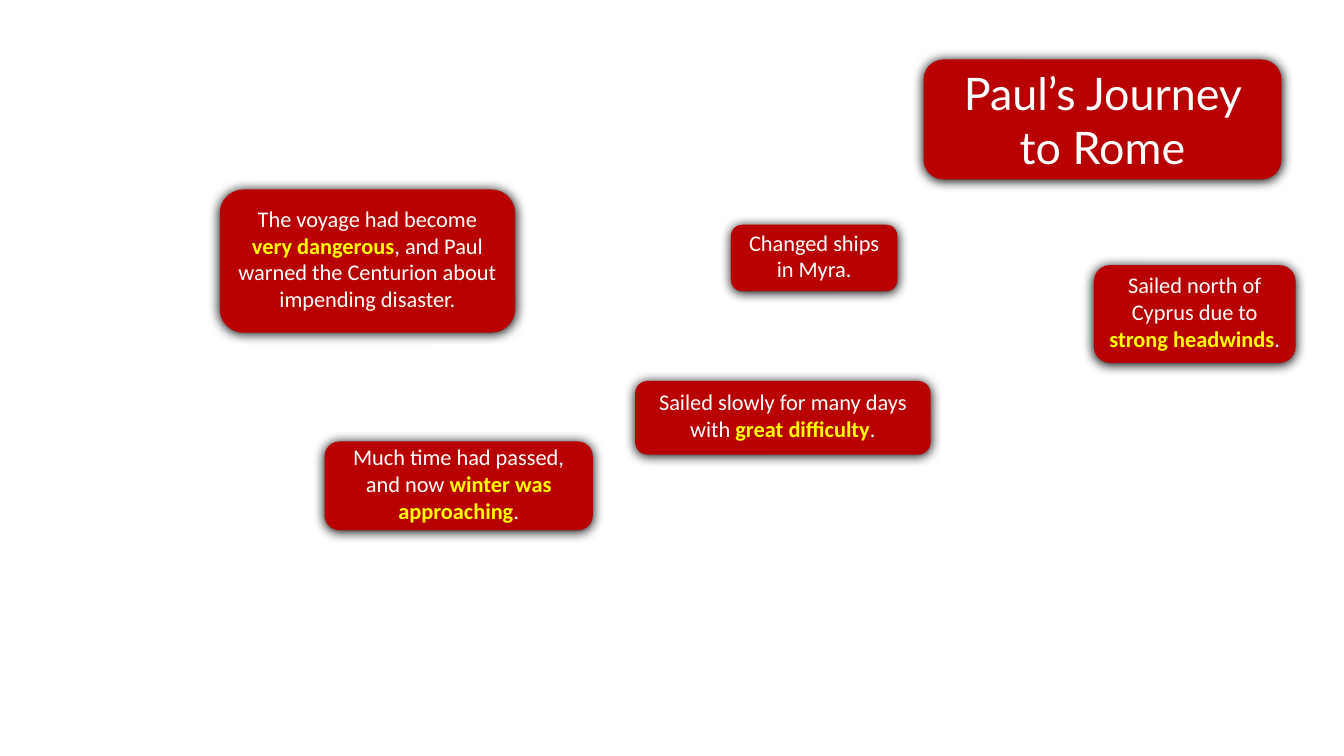
from lxml import etree
from pptx import Presentation
from pptx import util as u
from pptx.dml.color import RGBColor
from pptx.enum import shapes, text
from pptx.oxml import ns

RED = RGBColor(0xB9, 0x00, 0x00)
WHITE = RGBColor(0xFF, 0xFF, 0xFF)
YELLOW = RGBColor(0xFF, 0xFF, 0x00)
CELL = u.Inches(0.1)

HEAD = {"name": "Lato", "size": u.Pt(32)}
BODY = {"name": "Calibri", "size": u.Pt(16)}
EVEN = {"margin_top": u.Inches(0.05)}
HIGH = {"margin_top": 0}

GLOW = (
    f'<a:outerShdw {ns.nsdecls("a")} blurRad="{u.Pt(8.5)}" dist="{u.Pt(1)}" '
    'dir="5400000" algn="ctr" rotWithShape="0"><a:srgbClr val="000000"/></a:outerShdw>'
)

NOTES = [
    (91.6, 5.9, 35.5, 11.9, HEAD, EVEN, ["Paul’s Journey to Rome"]),
    (108.5, 26.3, 20, 9.7, BODY, HIGH,
     ["Sailed north of Cyprus due to ", "strong headwinds", "."]),
    (72.5, 22.3, 16.5, 6.6, BODY, HIGH, ["Changed ships in Myra."]),
    (63, 37.8, 29.3, 7.3, BODY, HIGH,
     ["Sailed slowly for many days with ", "great difficulty", "."]),
    (32.2, 43.8, 26.6, 8.8, BODY, HIGH,
     ["Much time had passed, and now ", "winter was approaching", "."]),
    (21.8, 18.8, 29.3, 14.2, BODY, HIGH,
     ["The voyage had become ", "very dangerous",
      ", and Paul warned the Centurion about impending disaster."]),
]

deck = Presentation()
deck.slide_width = u.Inches(13.33)
deck.slide_height = u.Inches(7.5)
slide = deck.slides.add_slide(deck.slide_layouts[6])

for col, row, wide, high, font, inset, parts in NOTES:
    area = [round(n * CELL) for n in (col, row, wide, high)]
    box = slide.shapes.add_shape(shapes.MSO_SHAPE.ROUNDED_RECTANGLE, *area)
    box.fill.solid()
    box.fill.fore_color.rgb = RED
    box.line.fill.background()
    box.shadow.inherit = False
    box._element.spPr.find(ns.qn("a:effectLst")).append(etree.fromstring(GLOW))

    frame = box.text_frame
    frame.word_wrap = True
    frame.vertical_anchor = text.MSO_ANCHOR.MIDDLE
    for key, val in inset.items():
        setattr(frame, key, val)

    para = frame.paragraphs[0]
    para.alignment = text.PP_ALIGN.CENTER
    for spot, words in enumerate(parts):
        run = para.add_run()
        run.text = words
        strong = spot == 1
        for key, val in {**font, "bold": strong}.items():
            setattr(run.font, key, val)
        run.font.color.rgb = YELLOW if strong else WHITE

deck.save("out.pptx")
